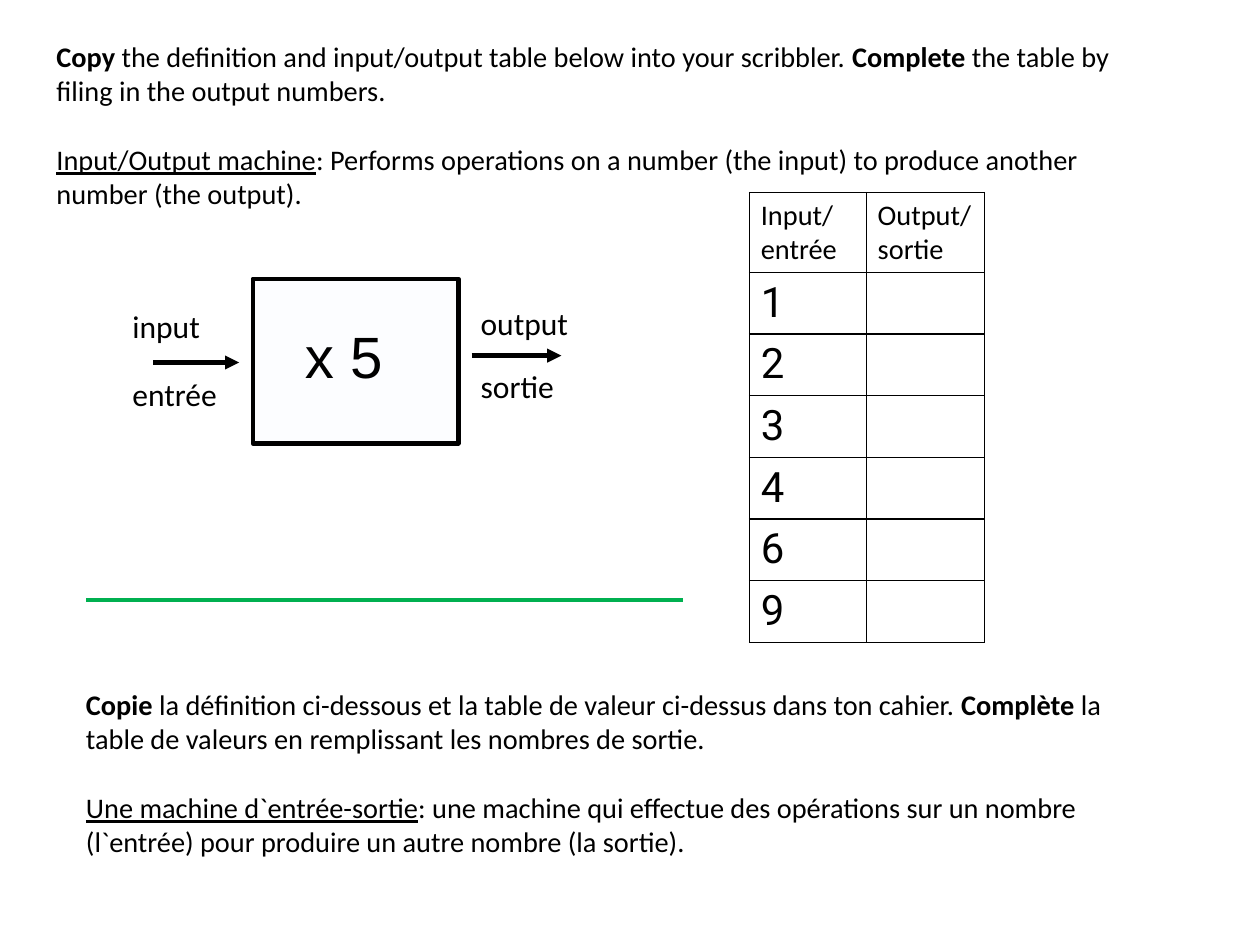
from lxml.etree import SubElement
from pptx import Presentation
from pptx.dml.color import RGBColor
from pptx.enum.shapes import MSO_CONNECTOR, MSO_SHAPE
from pptx.oxml.ns import qn
from pptx.util import Pt

BLACK = RGBColor(0x00, 0x00, 0x00)
WHITE = RGBColor(0xFF, 0xFF, 0xFF)
GREEN = RGBColor(0x00, 0xB0, 0x50)
PALE_BLUE = RGBColor(0xFC, 0xFD, 0xFF)


def add_text(paragraph, text, size, font="Calibri"):
    run = paragraph.add_run()
    run.text = text
    run.font.size = Pt(size)
    run.font.name = font
    run.font.color.rgb = BLACK
    return run


def add_line(left, right, y, color):
    line = slide.shapes.add_connector(MSO_CONNECTOR.STRAIGHT, Pt(left), Pt(y), Pt(right), Pt(y))
    line.line.color.rgb = color
    line.line.width = Pt(3)
    SubElement(line._element.spPr, qn("a:effectLst"))
    return line


presentation = Presentation()
presentation.slide_width = Pt(800)
presentation.slide_height = Pt(600)
slide = presentation.slides.add_slide(presentation.slide_layouts[6])

instructions = [
    (47.5, 432.7, 684.7, 116.6,
     [("Copie", "bold"),
      (" la définition ci-dessous et la table de valeur ci-dessus dans ton cahier. ", None),
      ("Complète", "bold"),
      (" la table de valeurs en remplissant les nombres de sortie.", None)],
     [("Une machine d`entrée-sortie", "underline"),
      (": une machine qui effectue des opérations sur un nombre (l`entrée) "
       "pour produire un autre nombre (la sortie).", None)]),
    (28.8, 21.6, 702.7, 141.8,
     [("Copy", "bold"),
      (" the definition and input/output table below into your scribbler. ", None),
      ("Complete", "bold"),
      (" the table by filing in the output numbers.", None)],
     [("Input/Output machine", "underline"),
      (": Performs operations on a number (the input) to produce another number (the output).", None)]),
]
for left, top, width, height, task, definition in instructions:
    box = slide.shapes.add_textbox(Pt(left), Pt(top), Pt(width), Pt(height))
    box.text_frame.word_wrap = True
    task_paragraph = box.text_frame.paragraphs[0]
    definition_paragraph = box.text_frame.add_paragraph()
    definition_paragraph.space_before = Pt(22)
    for paragraph, pieces in ((task_paragraph, task), (definition_paragraph, definition)):
        for text, style in pieces:
            run = add_text(paragraph, text, 18)
            if style:
                setattr(run.font, style, True)

machine = slide.shapes.add_shape(MSO_SHAPE.RECTANGLE, Pt(160.6), Pt(177.1), Pt(130.3), Pt(104.4))
machine.shadow.inherit = False
machine.fill.solid()
machine.fill.fore_color.rgb = PALE_BLUE
machine.line.color.rgb = BLACK
machine.line.width = Pt(3)

for left, right, y in ((97.2, 151.9, 230.2), (299.5, 356.4, 225.8)):
    arrow = add_line(left, right, y, BLACK)
    SubElement(arrow.line._get_or_add_ln(), qn("a:tailEnd"), type="triangle")

labels = [
    ("entrée", 77, 234.7, 96.5, 31.7, 20, "Calibri"),
    ("sortie", 298.1, 229.7, 84.2, 31.7, 20, "Calibri"),
    ("x 5", 186.5, 200, 79.9, 36, 37, "Arial"),
    ("input", 77, 191.5, 405.4, 31.7, 20, "Calibri"),
    ("output", 298.1, 189.4, 84.2, 31.7, 20, "Calibri"),
]
for text, left, top, width, height, size, font in labels:
    label = slide.shapes.add_textbox(Pt(left), Pt(top), Pt(width), Pt(height))
    label.text_frame.word_wrap = True
    add_text(label.text_frame.paragraphs[0], text, size, font)

table_rows = [("Input/ entrée", "Output/ sortie")] + [(number, "") for number in "123469"]
table = slide.shapes.add_table(7, 2, Pt(475.9), Pt(122.2), Pt(149), Pt(285.4)).table
table.columns[0].width = Pt(74.2)
table.columns[1].width = Pt(74.8)
for row_index, texts in enumerate(table_rows):
    is_header = row_index == 0
    table.rows[row_index].height = Pt(50.8 if is_header else 39.1)
    size, font = (18, "Calibri") if is_header else (26.6, "Roboto")
    for column_index, text in enumerate(texts):
        cell = table.cell(row_index, column_index)
        properties = cell._tc.get_or_add_tcPr()
        for side in ("a:lnL", "a:lnR", "a:lnT", "a:lnB"):
            border = SubElement(properties, qn(side), w=str(Pt(1)))
            border_fill = SubElement(border, qn("a:solidFill"))
            SubElement(border_fill, qn("a:srgbClr"), val=str(BLACK))
        cell.fill.solid()
        cell.fill.fore_color.rgb = WHITE
        if text:
            run = add_text(cell.text_frame.paragraphs[0], text, size, font)
            run.font.bold = False

add_line(54.7, 433.4, 380.9, GREEN)

presentation.save("out.pptx")
